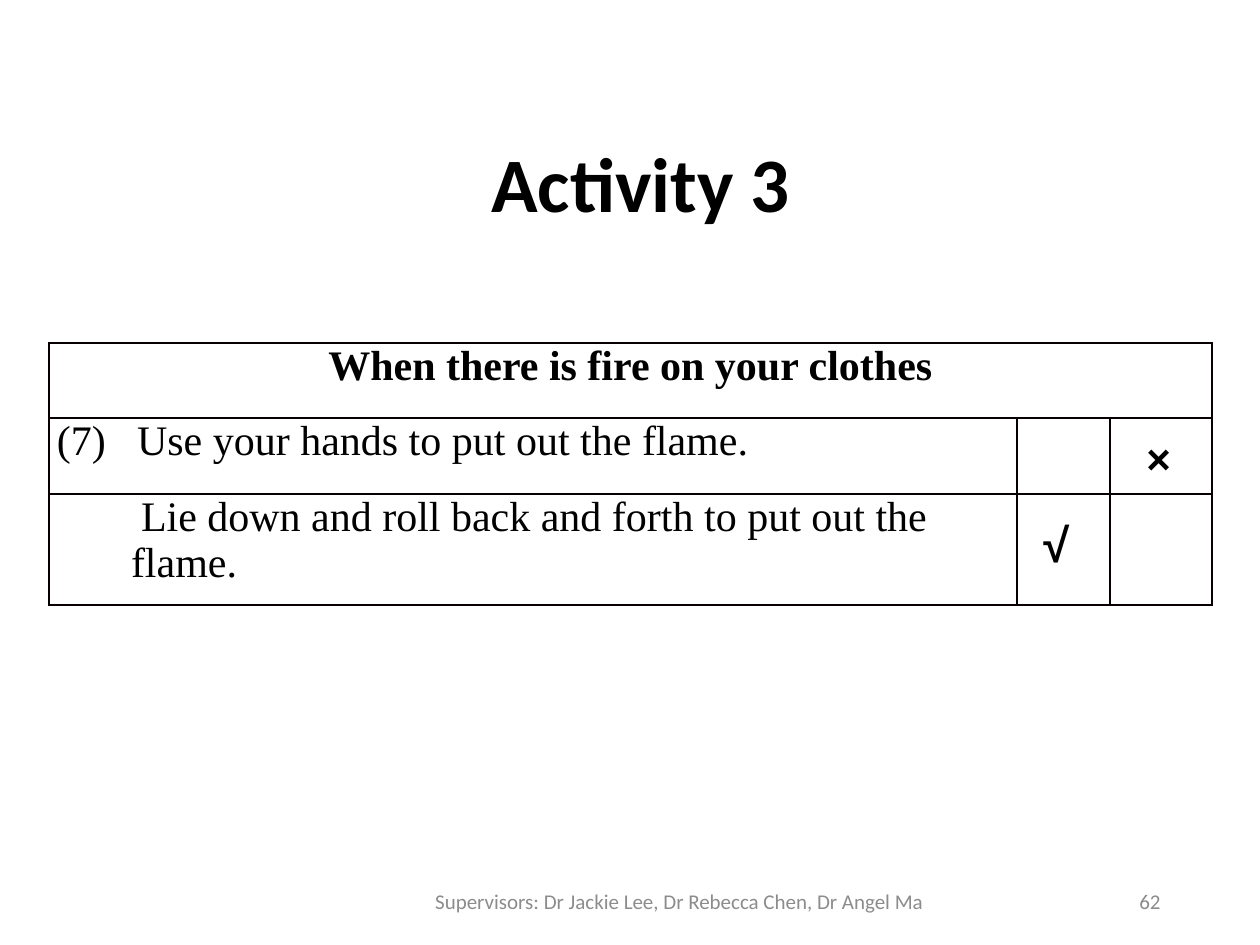
from lxml.etree import SubElement
from pptx import Presentation
from pptx.dml.color import RGBColor
from pptx.enum.text import MSO_ANCHOR as Anchor, MSO_AUTO_SIZE as AutoSize, PP_ALIGN as Align
from pptx.oxml import parse_xml
from pptx.oxml.ns import nsdecls, qn
from pptx.util import Pt

EMU_PER_PX = 914400 / 126


def px(n):
    return round(n * EMU_PER_PX)


def rgb(value):
    return RGBColor.from_string(value)


def write(tf, text, font="Calibri", size=12, color="000000", bold=False,
          align=Align.LEFT, anchor=Anchor.TOP, line=None, left=0, first=0, tab=None):
    """Put one formatted paragraph into a text frame."""
    tf.vertical_anchor = anchor
    p = tf.paragraphs[0]
    p.alignment = align
    if line:
        p.line_spacing = line
    pPr = p._p.get_or_add_pPr()
    pPr.set("marL", str(px(left)))
    pPr.set("indent", str(px(first)))
    if tab:
        tabs = SubElement(pPr, qn("a:tabLst"))
        SubElement(tabs, qn("a:tab"), pos=str(px(tab)), algn="l")
    r = p.add_run()
    r.text = text
    f = r.font
    f.name, f.size, f.bold = font, Pt(size), bold
    f.color.rgb = rgb(color)


class Deck:
    serif = "Times New Roman"
    mark_font = "Arial"
    grey = "8C8C8C"
    border = "080000"

    def __init__(self, width, height):
        self.prs = Presentation()
        self.prs.slide_width, self.prs.slide_height = px(width), px(height)
        self.slide = self.prs.slides.add_slide(self.prs.slide_layouts[5])

    def title(self, text, x, y, w, h, bottom):
        sp = self.slide.shapes.title
        sp.left, sp.top, sp.width, sp.height = map(px, (x, y, w, h))
        tf = sp.text_frame
        tf.auto_size = AutoSize.NONE
        tf.margin_bottom = px(bottom)
        write(tf, text, size=44, bold=True, align=Align.CENTER,
              anchor=Anchor.MIDDLE, line=0.9)

    def text(self, text, x, y, w, h, wrap=True, **style):
        tf = self.slide.shapes.add_textbox(*map(px, (x, y, w, h))).text_frame
        tf.word_wrap = wrap
        write(tf, text, **style)

    def footer(self, text, x, w, align):
        self.text(text, x, 876, w, 50, color=self.grey, align=align, anchor=Anchor.MIDDLE)

    def mark(self, text, x, y, w, h, size, wrap=True):
        self.text(text, x, y, w, h, wrap, font=self.mark_font, size=size, bold=True)

    def table(self, x, y, cols, rows):
        frame = self.slide.shapes.add_table(
            len(rows), len(cols), *map(px, (x, y, sum(cols), sum(rows))))
        tbl = frame.table
        tbl.first_row = tbl.horz_banding = False
        for col, w in zip(tbl.columns, cols):
            col.width = px(w)
        for row, h in zip(tbl.rows, rows):
            row.height = px(h)
        for cell in tbl.iter_cells():
            cell.fill.background()
            self.outline(cell)
        return tbl

    def outline(self, cell):
        tcPr = cell._tc.get_or_add_tcPr()
        for i, side in enumerate("LRTB"):
            tcPr.insert(i, parse_xml(
                f'<a:ln{side} {nsdecls("a")} w="{Pt(1)}"><a:solidFill>'
                f'<a:srgbClr val="{self.border}"/></a:solidFill></a:ln{side}>'))

    def cell(self, cell, text, **style):
        cell.margin_left = cell.margin_right = px(8)
        cell.margin_top, cell.margin_bottom = 0, px(10)
        write(cell.text_frame, text, font=self.serif, size=24, **style)


def main():
    deck = Deck(1260, 945)

    # Title, sitting in the upper half of its box
    deck.title("Activity 3", 47, 134, 1188, 192, bottom=91)

    # Statements with a column for right and one for wrong
    tbl = deck.table(49, 343, cols=[968, 93, 102], rows=[75, 76, 111])
    tbl.cell(0, 0).merge(tbl.cell(0, 2))
    deck.cell(tbl.cell(0, 0), "When there is fire on your clothes",
              bold=True, align=Align.CENTER)
    deck.cell(tbl.cell(1, 0), "(7)\tUse your hands to put out the flame.",
              left=80, first=-80, tab=80)
    deck.cell(tbl.cell(2, 0), "Lie down and roll back and forth to put out the flame.",
              left=74, first=10)

    # Answers
    deck.mark("√", 1031, 509, 67, 71, size=27)
    deck.mark("×", 1134, 426, 68, 63, size=24, wrap=False)

    # Footer and page number
    deck.footer("Supervisors: Dr Jackie Lee, Dr Rebecca Chen, Dr Angel Ma",
                417, 525, Align.CENTER)
    deck.footer("62", 890, 283, Align.RIGHT)

    deck.prs.save("out.pptx")


if __name__ == "__main__":
    main()
